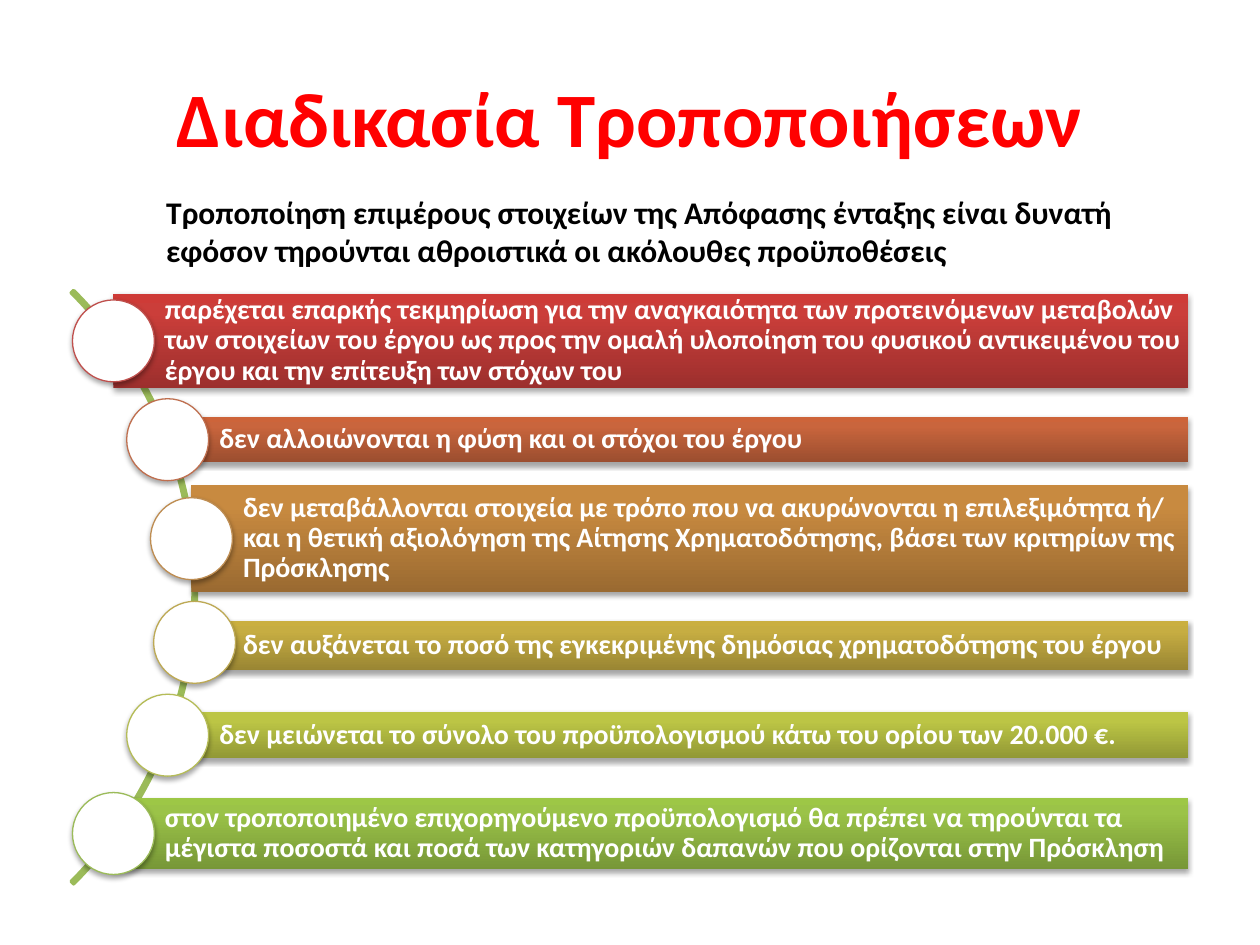
import copy

import pptx
import pptx.dml.color
import pptx.enum.shapes
import pptx.enum.text
import pptx.oxml
import pptx.oxml.ns
import pptx.util

Pt = pptx.util.Pt
SHAPES = pptx.enum.shapes.MSO_SHAPE
ALIGN = pptx.enum.text.PP_ALIGN
ANCHOR = pptx.enum.text.MSO_ANCHOR
AUTO_SIZE = pptx.enum.text.MSO_AUTO_SIZE

TITLE = "Διαδικασία Τροποποιήσεων"
INTRO = ("Τροποποίηση επιμέρους στοιχείων της Απόφασης ένταξης είναι δυνατή "
         "εφόσον τηρούνται αθροιστικά οι ακόλουθες προϋποθέσεις")

# text, bar (left, top, height), circle offset, gradient from bottom to top, circle outline
CONDITIONS = [
    ("παρέχεται επαρκής τεκμηρίωση για την αναγκαιότητα των προτεινόμενων μεταβολών "
     "των στοιχείων του έργου ως προς την ομαλή υλοποίηση του φυσικού αντικειμένου του "
     "έργου και την επίτευξη των στόχων του",
     (64.8, 167.8, 54), (0, 0), ("9C2F2D", "CB3E3A", "CE3B37"), "C0504D"),
    ("δεν αλλοιώνονται η φύση και οι στόχοι του έργου",
     (95.8, 238.3, 25.9), (0, 0), ("9B4E2F", "C9653D", "CD643A"), "BF6F4F"),
    ("δεν μεταβάλλονται στοιχεία με τρόπο που να ακυρώνονται η επιλεξιμότητα ή/ "
     "και η θετική αξιολόγηση της Αίτησης Χρηματοδότησης, βάσει των κριτηρίων της "
     "Πρόσκλησης",
     (109.4, 277.2, 61.2), (0, 0), ("9A6A31", "C88A40", "CB8B3D"), "BE8D52"),
    ("δεν αυξάνεται το ποσό της εγκεκριμένης δημόσιας χρηματοδότησης του έργου",
     (109.4, 355, 28.1), (1.8, -2), ("998533", "C6AD42", "CAAF40"), "BDA954"),
    ("δεν μειώνεται το σύνολο του προϋπολογισμού κάτω του ορίου των 20.000 €.",
     (95.8, 406.8, 26.6), (0, 0), ("919835", "BCC545", "BFC843"), "B5BC57"),
    ("στον τροποποιημένο επιχορηγούμενο προϋπολογισμό θα πρέπει να τηρούνται τα "
     "μέγιστα ποσοστά και ποσά των κατηγοριών δαπανών που ορίζονται στην Πρόσκληση",
     (64.8, 455.8, 41), (0, 0), ("779737", "9BC348", "9DC746"), "9BBB59"),
]

THEME = {
    "font": "Calibri",
    "title": (44, "FF0000"),
    "intro": (18, "000000"),
    "bar": (16, "FFFFFF"),
    "circle": "FFFFFF",
    "arc": "9BBB59",
}
GRADIENT_POSITIONS = (0, 0.8, 1)
BAR_RIGHT = 679
CIRCLE_SIZE = 46.8
ARC_BOX = (-367.2, 95.8, 479.5, 479.5)
ARC_ADJUSTMENTS = (189, 27, 0.004)


def color(value):
    return pptx.dml.color.RGBColor.from_string(value)


def place(shape, left, top, width, height):
    shape.left, shape.top = Pt(left), Pt(top)
    shape.width, shape.height = Pt(width), Pt(height)


def write(shape, text, style, alignment, anchor):
    text_frame = shape.text_frame
    text_frame.text = text
    text_frame.word_wrap = True
    text_frame.vertical_anchor = anchor
    paragraph = text_frame.paragraphs[0]
    paragraph.alignment = alignment
    paragraph.space_before = Pt(0)
    size, text_color = THEME[style]
    for run in paragraph.runs:
        run.font.name = THEME["font"]
        run.font.size = Pt(size)
        run.font.bold = True
        run.font.color.rgb = color(text_color)
    return paragraph


def add_shape(slide, kind, box):
    shape = slide.shapes.add_shape(kind, *(Pt(length) for length in box))
    shape.shadow.inherit = False
    return shape


def add_soft_shadow(shape):
    effects = shape.element.spPr.find(pptx.oxml.ns.qn("a:effectLst"))
    effects.append(pptx.oxml.parse_xml(
        f'<a:outerShdw {pptx.oxml.ns.nsdecls("a")} blurRad="{Pt(3.1)}" dist="{Pt(1.8)}" '
        'dir="5400000" rotWithShape="0"><a:srgbClr val="000000">'
        '<a:alpha val="35000"/></a:srgbClr></a:outerShdw>'))


def fill_gradient(shape, colors):
    shape.fill.gradient()
    shape.fill.gradient_angle = 90
    stops = shape.element.spPr.find(".//" + pptx.oxml.ns.qn("a:gsLst"))
    stops.append(copy.deepcopy(stops[0]))
    for stop, position, value in zip(shape.fill.gradient_stops, GRADIENT_POSITIONS, colors):
        stop.position = position
        stop.color.rgb = color(value)


def add_arc(slide):
    arc = add_shape(slide, SHAPES.BLOCK_ARC, ARC_BOX)
    for index, value in enumerate(ARC_ADJUSTMENTS):
        arc.adjustments[index] = value
    arc.fill.background()
    arc.line.color.rgb = color(THEME["arc"])
    arc.line.width = Pt(2)


def add_condition(slide, text, bar_place, circle_offset, gradient, outline):
    """Add a bar with its text and the circle centred on the bar's left end."""
    left, top, height = bar_place
    bar = add_shape(slide, SHAPES.RECTANGLE, (left, top, BAR_RIGHT - left, height))
    fill_gradient(bar, gradient)
    bar.line.fill.background()
    add_soft_shadow(bar)
    paragraph = write(bar, text, "bar", ALIGN.LEFT, ANCHOR.MIDDLE)
    paragraph.line_spacing = 0.9
    text_frame = bar.text_frame
    text_frame.margin_left = Pt(29.5)
    text_frame.margin_top = text_frame.margin_right = text_frame.margin_bottom = Pt(2.9)

    circle_left = left + circle_offset[0] - CIRCLE_SIZE / 2
    circle_top = top + height / 2 + circle_offset[1] - CIRCLE_SIZE / 2
    circle = add_shape(slide, SHAPES.OVAL,
                       (circle_left, circle_top, CIRCLE_SIZE, CIRCLE_SIZE))
    circle.fill.solid()
    circle.fill.fore_color.rgb = color(THEME["circle"])
    circle.line.color.rgb = color(outline)
    circle.line.width = Pt(0.75)
    add_soft_shadow(circle)


def main():
    presentation = pptx.Presentation()
    presentation.slide_width, presentation.slide_height = Pt(720), Pt(540)
    slide = presentation.slides.add_slide(presentation.slide_layouts[1])

    title = slide.shapes.title
    place(title, 36, 21.6, 648, 90)
    write(title, TITLE, "title", ALIGN.CENTER, ANCHOR.MIDDLE)

    add_arc(slide)
    for condition in CONDITIONS:
        add_condition(slide, *condition)

    intro = slide.placeholders[1]
    place(intro, 87.8, 106.6, 595.4, 72.7)
    paragraph = write(intro, INTRO, "intro", ALIGN.LEFT, ANCHOR.TOP)
    intro.text_frame.auto_size = AUTO_SIZE.NONE
    properties = paragraph._p.get_or_add_pPr()
    properties.set("marL", "0")
    properties.set("indent", "0")
    properties.append(pptx.oxml.parse_xml(f'<a:buNone {pptx.oxml.ns.nsdecls("a")}/>'))

    presentation.save("out.pptx")


if __name__ == "__main__":
    main()
